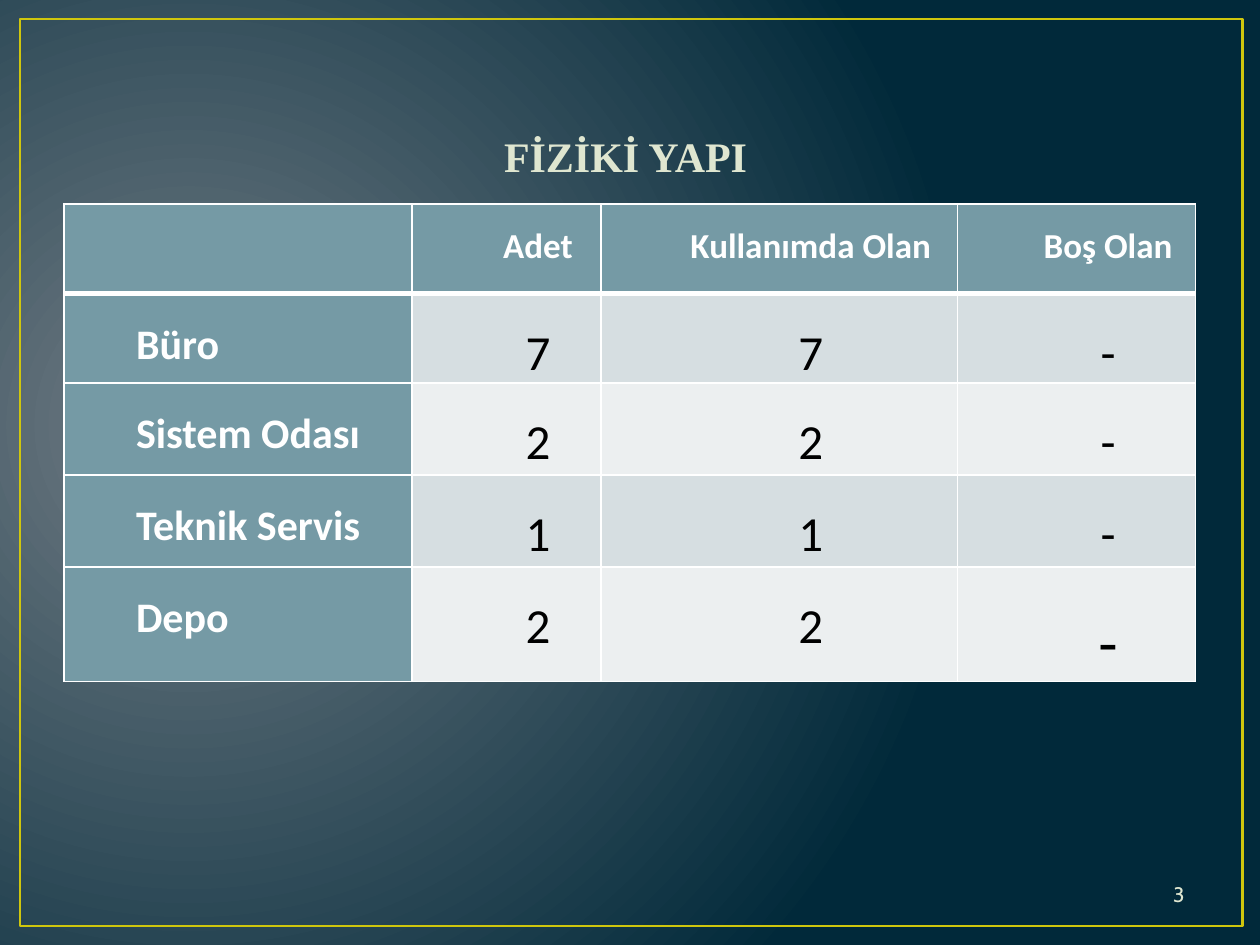
from lxml.etree import SubElement
from pptx import Presentation
from pptx.dml.color import RGBColor
from pptx.enum.shapes import MSO_SHAPE as Shape
from pptx.enum.text import MSO_ANCHOR as Anchor, PP_ALIGN as Align
from pptx.oxml.ns import qn
from pptx.util import Inches, Pt

GLOW = RGBColor(0x71, 0x7C, 0x84)
NIGHT = RGBColor(0x01, 0x29, 0x3A)
GOLD = RGBColor(0xCF, 0xC6, 0x0D)
CREAM = RGBColor(0xDF, 0xE6, 0xD0)
TEAL = RGBColor(0x75, 0x9A, 0xA5)
BANDS = RGBColor(0xD6, 0xDE, 0xE1), RGBColor(0xEC, 0xEF, 0xF0)
WHITE = RGBColor(0xFF, 0xFF, 0xFF)
BLACK = RGBColor(0, 0, 0)

COLUMNS = [2.76, 1.5, 2.83, 1.89]
ROWS = [0.71, 0.71, 0.73, 0.73, 0.91]
DATA = [
    ["", "Adet", "Kullanımda Olan", "Boş Olan"],
    ["Büro", "7", "7", "-"],
    ["Sistem Odası", "2", "2", "-"],
    ["Teknik Servis", "1", "1", "-"],
    ["Depo", "2", "2", "-"],
]


def apply(target, values):
    for name, value in values.items():
        setattr(target, name, value)


def write(para, text, color, **font):
    span = para.add_run()
    span.text = text
    apply(span.font, font)
    span.font.color.rgb = color


def paint_background(page):
    fill = page.background.fill
    fill.gradient()
    for stop, color, position in zip(fill.gradient_stops, (GLOW, NIGHT), (0, 1)):
        stop.color.rgb = color
        stop.position = position
    gradient = page.background._cSld.find(".//" + qn("a:gradFill"))
    gradient.remove(gradient.find(qn("a:lin")))
    circle = SubElement(gradient, qn("a:path"), path="circle")
    SubElement(circle, qn("a:fillToRect"), l="15000", t="50000", r="85000", b="60000")


def add_frame(page, box):
    frame = page.shapes.add_shape(Shape.RECTANGLE, *map(Inches, box))
    frame.shadow.inherit = False
    frame.fill.background()
    frame.line.color.rgb = GOLD
    frame.line.width = Pt(1.5)


def add_text(page, box, text, anchor, layout, font):
    frame = page.shapes.add_textbox(*map(Inches, box)).text_frame
    apply(frame, {"word_wrap": True, "vertical_anchor": anchor})
    para = frame.paragraphs[0]
    apply(para, layout)
    write(para, text, CREAM, **font)


def add_borders(cell, widths):
    properties = cell._tc.get_or_add_tcPr()
    for side, width in widths.items():
        line = SubElement(properties, qn(f"a:ln{side}"), w=str(Pt(width)))
        fill = SubElement(line, qn("a:solidFill"))
        SubElement(fill, qn("a:srgbClr"), val=str(WHITE))


def cell_style(row, column):
    if row == 0:
        return TEAL, WHITE, 20, Align.CENTER
    if column == 0:
        return TEAL, WHITE, 24, Align.LEFT if row == len(DATA) - 1 else Align.JUSTIFY
    last = row == len(DATA) - 1 and column == len(COLUMNS) - 1
    return BANDS[(row - 1) % 2], BLACK, 36 if last else 28, Align.CENTER


def fill_cell(cell, text, row, column):
    fill, color, size, align = cell_style(row, column)
    add_borders(cell, {"L": 1, "R": 1, "T": 3 if row == 1 else 1, "B": 3 if row == 0 else 1})
    cell.fill.solid()
    cell.fill.fore_color.rgb = fill
    apply(cell, {"margin_left": Inches(0.07), "margin_right": Inches(0.07),
                 "margin_top": 0, "margin_bottom": 0})
    if not text:
        return
    para = cell.text_frame.paragraphs[0]
    apply(para, {"alignment": align, "line_spacing": 1.5})
    if column == len(COLUMNS) - 1:
        para.space_after = Pt(10)
    indent = para._p.get_or_add_pPr()
    indent.set("marL", str(Inches(0.5)))
    indent.set("indent", "0")
    write(para, text, color, name="Calibri", size=Pt(size), bold=color == WHITE)


def add_space_table(page, box):
    table = page.shapes.add_table(len(ROWS), len(COLUMNS), *map(Inches, box)).table
    apply(table, {"first_row": False, "horz_banding": False})
    for column, width in zip(table.columns, COLUMNS):
        column.width = Inches(width)
    for row, height in zip(table.rows, ROWS):
        row.height = Inches(height)
    for row, texts in enumerate(DATA):
        for column, text in enumerate(texts):
            fill_cell(table.cell(row, column), text, row, column)


def main():
    deck = Presentation()
    apply(deck, {"slide_width": Inches(10), "slide_height": Inches(7.5)})
    page = deck.slides.add_slide(deck.slide_layouts[6])
    paint_background(page)
    add_frame(page, (0.16, 0.15, 9.7, 7.2))
    add_text(page, (0.43, 0.99, 9.07, 5.71), "FİZİKİ YAPI", Anchor.TOP,
             {"alignment": Align.CENTER, "space_before": Pt(3)},
             {"name": "Times New Roman", "size": Pt(24), "bold": True})
    add_space_table(page, (0.51, 1.62, sum(COLUMNS), sum(ROWS)))
    add_text(page, (7.17, 6.9, 2.33, 0.4), "3", Anchor.MIDDLE,
             {"alignment": Align.RIGHT}, {"name": "Cabin", "size": Pt(12)})
    deck.save("out.pptx")


if __name__ == "__main__":
    main()
